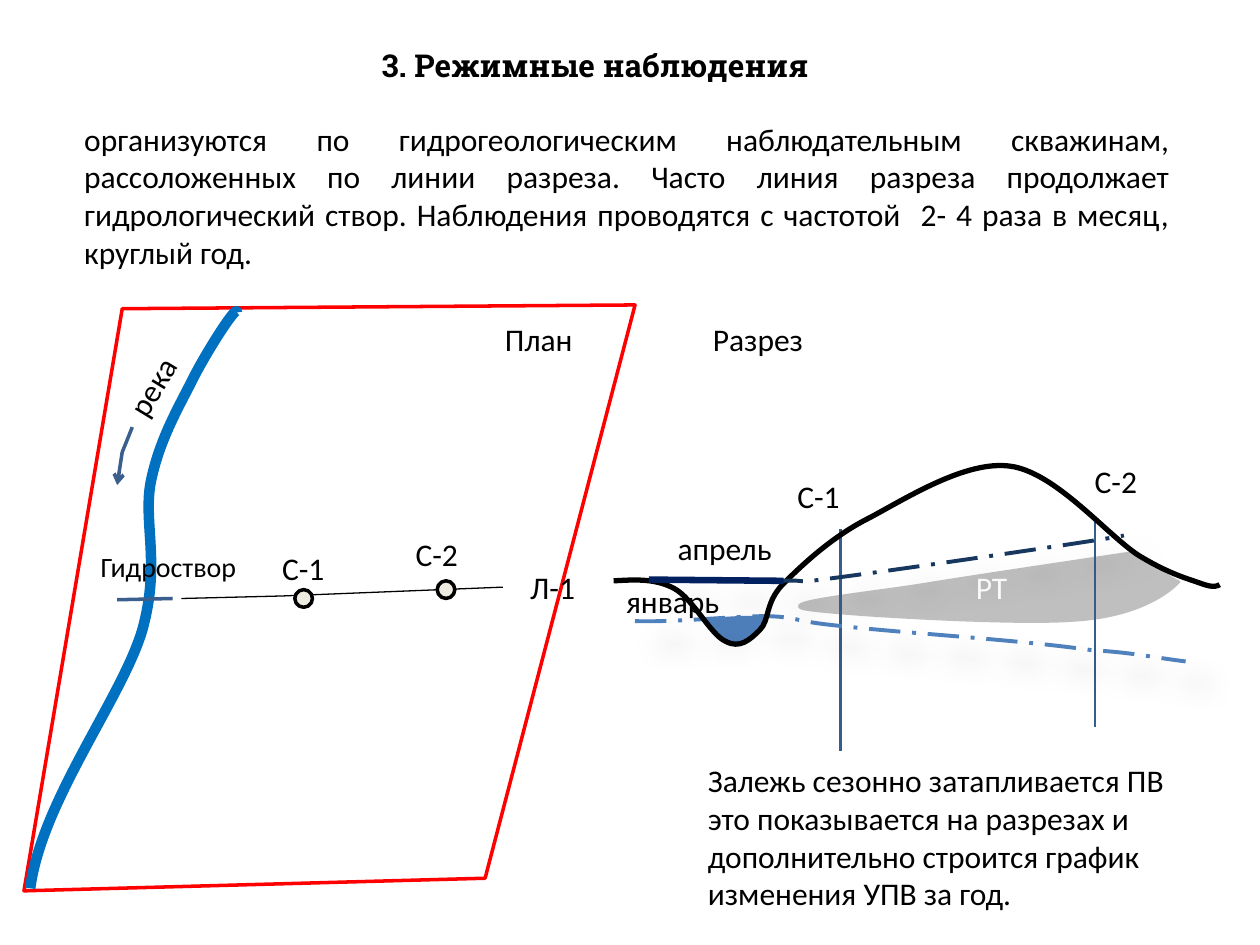
from lxml.etree import SubElement
from pptx import Presentation
from pptx.dml.color import RGBColor
from pptx.enum.dml import MSO_LINE
from pptx.enum.shapes import MSO_CONNECTOR, MSO_SHAPE
from pptx.enum.text import MSO_ANCHOR, PP_ALIGN
from pptx.oxml.ns import qn
from pptx.util import Inches, Pt

COLORS = {
    "black": "000000", "white": "FFFFFF", "plan": "FF0000", "river": "0070C0",
    "gauge": "3A5F8C", "well": "355D8D", "well_fill": "EEECE1", "ore": "BFBFBF",
    "water": "4F81BD", "april": "17375E", "april_river": "002060",
}
rgb = {name: RGBColor.from_string(value) for name, value in COLORS.items()}

prs = Presentation()
prs.slide_width, prs.slide_height = Inches(10), Inches(7.5)
slide = prs.slides.add_slide(prs.slide_layouts[6])
shapes = slide.shapes


def add_outline(start, steps, line=None, width=2, fill=None, closed=False):
    """Steps are (x, y) for a straight line, six numbers for a Bezier curve."""
    anchors = [(Inches(p[-2]), Inches(p[-1])) for p in [start, *steps]]
    builder = shapes.build_freeform(*anchors[0], scale=1.0)
    builder.add_line_segments(anchors[1:], close=closed)
    outline = builder.convert_to_shape()
    # Turn straight segments into curves by adding their two control points
    segments = list(outline._element.spPr.iter(qn("a:lnTo")))
    for segment, step in zip(segments, steps):
        if len(step) == 6:
            segment.tag = qn("a:cubicBezTo")
            for i in (0, 1):
                control = SubElement(segment, qn("a:pt"),
                                     x=str(Inches(step[2 * i]) - outline.left),
                                     y=str(Inches(step[2 * i + 1]) - outline.top))
                segment.insert(i, control)
    outline.shadow.inherit = False
    if fill:
        outline.fill.solid()
        outline.fill.fore_color.rgb = rgb[fill]
    else:
        outline.fill.background()
    if line:
        outline.line.color.rgb = rgb[line]
        outline.line.width = Pt(width)
    else:
        outline.line.fill.background()
    return outline


def add_text(text, left, top, width, height=0.4, size=18, font="Calibri", wrap=False):
    box = shapes.add_textbox(Inches(left), Inches(top), Inches(width), Inches(height))
    box.text_frame.word_wrap = wrap
    box.text_frame.text = text
    run_font = box.text_frame.paragraphs[0].runs[0].font
    run_font.name, run_font.size = font, Pt(size)
    run_font.color.rgb = rgb["black"]
    return box


# Ore body and river water in the section
ore = add_outline((9.36, 4.61), [
    (9.28, 4.7, 9.03, 4.89, 8.53, 4.92), (8.04, 4.96, 6.57, 4.87, 6.38, 4.83),
    (6.18, 4.78, 6.91, 4.71, 7.34, 4.64), (7.77, 4.57, 8.38, 4.48, 8.98, 4.39),
], "ore", fill="ore")
ore.text_frame.text = "РТ"
ore.text_frame.vertical_anchor = MSO_ANCHOR.MIDDLE
ore_label = ore.text_frame.paragraphs[0]
ore_label.alignment = PP_ALIGN.CENTER
ore_font = ore_label.runs[0].font
ore_font.name, ore_font.size = "Calibri", Pt(18)
ore_font.color.rgb = rgb["white"]
add_outline((5.56, 4.91), [(5.73, 4.9, 5.86, 4.88, 6.09, 4.89), (6, 5.03),
                           (5.86, 5.11), (5.68, 5.05)], fill="water", closed=True)

# Title and introduction
title = add_text("3. Режимные наблюдения", 2.93, 0.32, 5, font="Roboto Slab", wrap=True)
title.text_frame.paragraphs[0].runs[0].font.bold = True
intro = add_text(
    "организуются по гидрогеологическим наблюдательным скважинам, рассоложенных "
    "по линии разреза. Часто линия разреза продолжает гидрологический створ. "
    "Наблюдения проводятся с частотой  2- 4 раза в месяц, круглый год.",
    0.57, 0.9, 8.81, 1.31, wrap=True)
intro.text_frame.paragraphs[0].alignment = PP_ALIGN.JUSTIFY

# Plan: frame, river, flow arrow, gauge and survey line
add_outline((0.97, 2.45), [(0.19, 7.07), (3.85, 6.97), (5.04, 2.42)],
            "plan", fill="white", closed=True)
add_outline((1.88, 2.48), [
    (1.89, 2.4, 1.64, 2.79, 1.53, 3.01), (1.42, 3.23, 1.27, 3.48, 1.2, 3.81),
    (1.13, 4.14, 1.28, 4.46, 1.13, 5), (0.97, 5.54, 0.33, 6.36, 0.24, 7.05),
], "river", 6)
river_label = add_text("река", 0.86, 2.86, 0.7)
river_label.rotation = 301.4
flow = add_outline((1.05, 3.39), [(0.97, 3.59), (0.93, 3.85)], "gauge")
SubElement(flow.line._get_or_add_ln(), qn("a:tailEnd"), type="arrow")
add_outline((1.37, 4.75), [(0.93, 4.76)], "gauge")
add_text("Гидроствор", 0.7, 4.31, 1.29, 0.37, size=16)
add_outline((3.99, 4.66), [(2.24, 4.73), (1.44, 4.75)], "black", 0.75)

# Section: wells
for x, top, bottom in [(6.67, 4.2, 5.96), (8.69, 4.14, 5.77)]:
    well = shapes.add_connector(MSO_CONNECTOR.STRAIGHT, Inches(x), Inches(top),
                                Inches(x), Inches(bottom))
    well.line.color.rgb = rgb["well"]
    well.line.width = Pt(1.5)
    SubElement(well._element.spPr, qn("a:effectLst"))

# Section: January level, ground surface, April level
january = add_outline((5.04, 4.93), [
    (5.38, 4.94, 5.81, 4.89, 6.09, 4.89), (6.36, 4.9, 6.27, 4.93, 6.69, 4.97),
    (7.12, 5.02, 8.11, 5.08, 8.66, 5.16), (8.99, 5.18, 9.1, 5.21, 9.41, 5.25),
], "water", 2.25)
add_outline((4.87, 4.61), [
    (5.04, 4.6, 5.2, 4.59, 5.35, 4.67), (5.5, 4.75, 5.64, 5.04, 5.76, 5.09),
    (5.87, 5.15, 5.95, 5.08, 6.03, 5), (6.11, 4.92, 6.07, 4.79, 6.21, 4.64),
    (6.36, 4.49, 6.6, 4.26, 6.9, 4.11), (7.2, 3.95, 7.67, 3.65, 8.02, 3.7),
    (8.38, 3.75, 8.79, 4.25, 9.04, 4.41), (9.29, 4.56, 9.42, 4.59, 9.53, 4.63),
    (9.64, 4.67, 9.66, 4.65, 9.68, 4.64),
], "black", 3)
april = add_outline((5.19, 4.6), [
    (5.53, 4.61, 5.96, 4.61, 6.21, 4.61), (6.46, 4.6, 6.23, 4.64, 6.68, 4.58),
    (7.14, 4.52, 8.86, 4.27, 8.92, 4.25),
], "april", 2.25)
for level in (january, april):
    level.line.dash_style = MSO_LINE.LONG_DASH_DOT
    effects = level._element.spPr.find(qn("a:effectLst"))
    shadow = SubElement(effects, qn("a:outerShdw"), blurRad=str(Pt(15)),
                        dist=str(Pt(18)), dir=str(45 * 60000), rotWithShape="0")
    shade = SubElement(shadow, qn("a:srgbClr"), val=COLORS["black"])
    SubElement(shade, qn("a:alpha"), val="26000")
add_outline((5.15, 4.6), [(6.22, 4.61)], "april_river", 3.75)

# Labels of both drawings
for text, left, top, width in [
    ("С-1", 2.14, 4.31, 0.54), ("С-2", 3.2, 4.2, 0.54), ("Л-1", 4.11, 4.46, 0.56),
    ("С-2", 8.59, 3.62, 0.54), ("С-1", 6.23, 3.74, 0.54),
    ("План", 3.91, 2.49, 0.74), ("Разрез", 5.56, 2.49, 0.93),
    ("апрель", 5.28, 4.15, 0.96), ("январь", 4.87, 4.57, 0.95),
]:
    add_text(text, left, top, width)

# Plan: well marks
for left, top in [(2.34, 4.68), (3.47, 4.61)]:
    mark = shapes.add_shape(MSO_SHAPE.OVAL, Inches(left), Inches(top),
                            Inches(0.14), Inches(0.14))
    mark.shadow.inherit = False
    mark.fill.solid()
    mark.fill.fore_color.rgb = rgb["well_fill"]
    mark.line.color.rgb = rgb["black"]
    mark.line.width = Pt(2)

# Conclusion
add_text("Залежь сезонно затапливается ПВ это показывается на разрезах и "
         "дополнительно строится график изменения УПВ за год.",
         5.52, 5.99, 3.89, 1.31, wrap=True)

prs.save("out.pptx")
